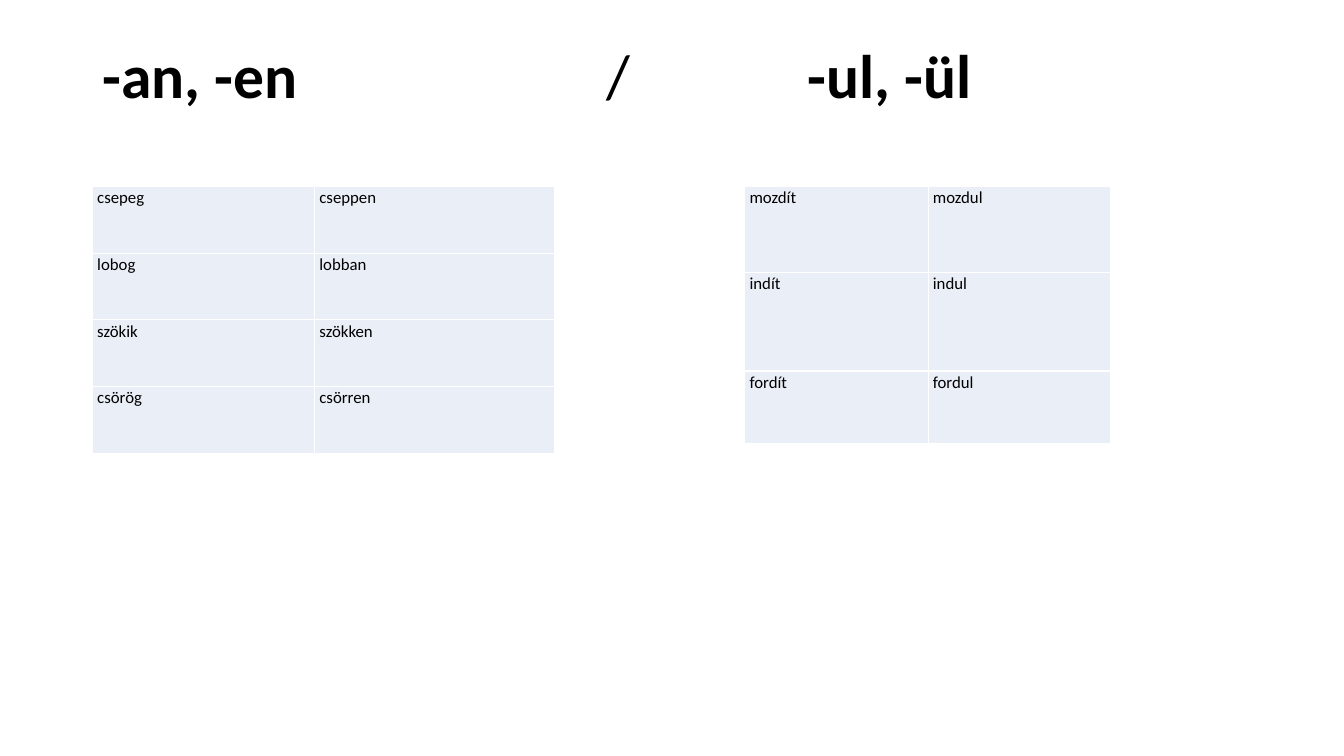
from dataclasses import dataclass

from lxml.etree import SubElement
from pptx import Presentation
from pptx.dml.color import RGBColor
from pptx.enum.text import MSO_ANCHOR
from pptx.oxml.ns import qn
from pptx.slide import Slide
from pptx.table import _Cell
from pptx.text.text import _Paragraph, _Run
from pptx.util import Cm, Pt


@dataclass(frozen=True)
class Theme:
    font: str = "Calibri"
    text: str = "000000"
    cell: str = "EAEFF7"
    border: str = "FFFFFF"
    title_size: int = 44
    cell_size: int = 12
    border_width: int = 1


@dataclass(frozen=True)
class VerbTable:
    """Verb pairs with the table's left edge and cell sizes in centimetres."""
    left: float
    columns: tuple[float, ...]
    rows: tuple[float, ...]
    pairs: tuple[tuple[str, str], ...]


THEME = Theme()
MARGIN = 2.33
TABLE_TOP = 4.7
TITLE_TABS = (12.7, 17.78)
TITLE_PARTS = (("-an, -en\t", True), ("/\t", False), ("-ul, -ül", True))
VERB_TABLES = (
    VerbTable(MARGIN, (5.6, 6.04), (1.68,) * 4, (
        ("csepeg", "cseppen"),
        ("lobog", "lobban"),
        ("szökik", "szökken"),
        ("csörög", "csörren"),
    )),
    VerbTable(18.77, (4.62, 4.6), (2.16, 2.49, 1.83), (
        ("mozdít", "mozdul"),
        ("indít", "indul"),
        ("fordít", "fordul"),
    )),
)


def add_run(p: _Paragraph, text: str, size: int, bold: bool = False) -> _Run:
    r = p.add_run()
    r.text = text
    for name, value in {"name": THEME.font, "size": Pt(size), "bold": bold}.items():
        setattr(r.font, name, value)
    r.font.color.rgb = RGBColor.from_string(THEME.text)
    return r


def add_title(slide: Slide) -> None:
    tf = slide.shapes.add_textbox(Cm(MARGIN), Cm(1.02), Cm(29.21), Cm(3.68)).text_frame
    tf.word_wrap = True
    tf.vertical_anchor = MSO_ANCHOR.TOP
    p = tf.paragraphs[0]
    p.line_spacing = 0.9
    tabs = SubElement(p._p.get_or_add_pPr(), qn("a:tabLst"))
    for stop in TITLE_TABS:
        SubElement(tabs, qn("a:tab"), pos=str(Cm(stop)), algn="l")
    for text, bold in TITLE_PARTS:
        add_run(p, text, THEME.title_size, bold)


def add_borders(cell: _Cell) -> None:
    """Outline a cell; call before setting its fill, which must follow in the XML."""
    tc_pr = cell._tc.get_or_add_tcPr()
    for side in ("lnL", "lnR", "lnT", "lnB"):
        line = SubElement(tc_pr, qn(f"a:{side}"), w=str(Pt(THEME.border_width)))
        fill = SubElement(line, qn("a:solidFill"))
        SubElement(fill, qn("a:srgbClr"), val=THEME.border)


def fill_cell(cell: _Cell, text: str) -> None:
    layout = {
        "margin_left": Cm(0.12), "margin_right": Cm(0.12),
        "margin_top": Cm(0), "margin_bottom": Cm(0),
        "vertical_anchor": MSO_ANCHOR.TOP,
    }
    for name, value in layout.items():
        setattr(cell, name, value)
    add_borders(cell)
    cell.fill.solid()
    cell.fill.fore_color.rgb = RGBColor.from_string(THEME.cell)
    p = cell.text_frame.paragraphs[0]
    p.line_spacing = 1.07
    add_run(p, text, THEME.cell_size)


def add_verb_table(slide: Slide, verbs: VerbTable) -> None:
    table = slide.shapes.add_table(
        len(verbs.rows), len(verbs.columns), Cm(verbs.left), Cm(TABLE_TOP),
        Cm(sum(verbs.columns)), Cm(sum(verbs.rows)),
    ).table
    table.first_row = table.horz_banding = False
    for column, width in zip(table.columns, verbs.columns):
        column.width = Cm(width)
    for row, height, pair in zip(table.rows, verbs.rows, verbs.pairs):
        row.height = Cm(height)
        for cell, verb in zip(row.cells, pair):
            fill_cell(cell, verb)


def main() -> None:
    prs = Presentation()
    prs.slide_width, prs.slide_height = Cm(33.87), Cm(19.05)
    slide = prs.slides.add_slide(prs.slide_layouts[6])
    add_title(slide)
    for verbs in VERB_TABLES:
        add_verb_table(slide, verbs)
    prs.save("out.pptx")


if __name__ == "__main__":
    main()
